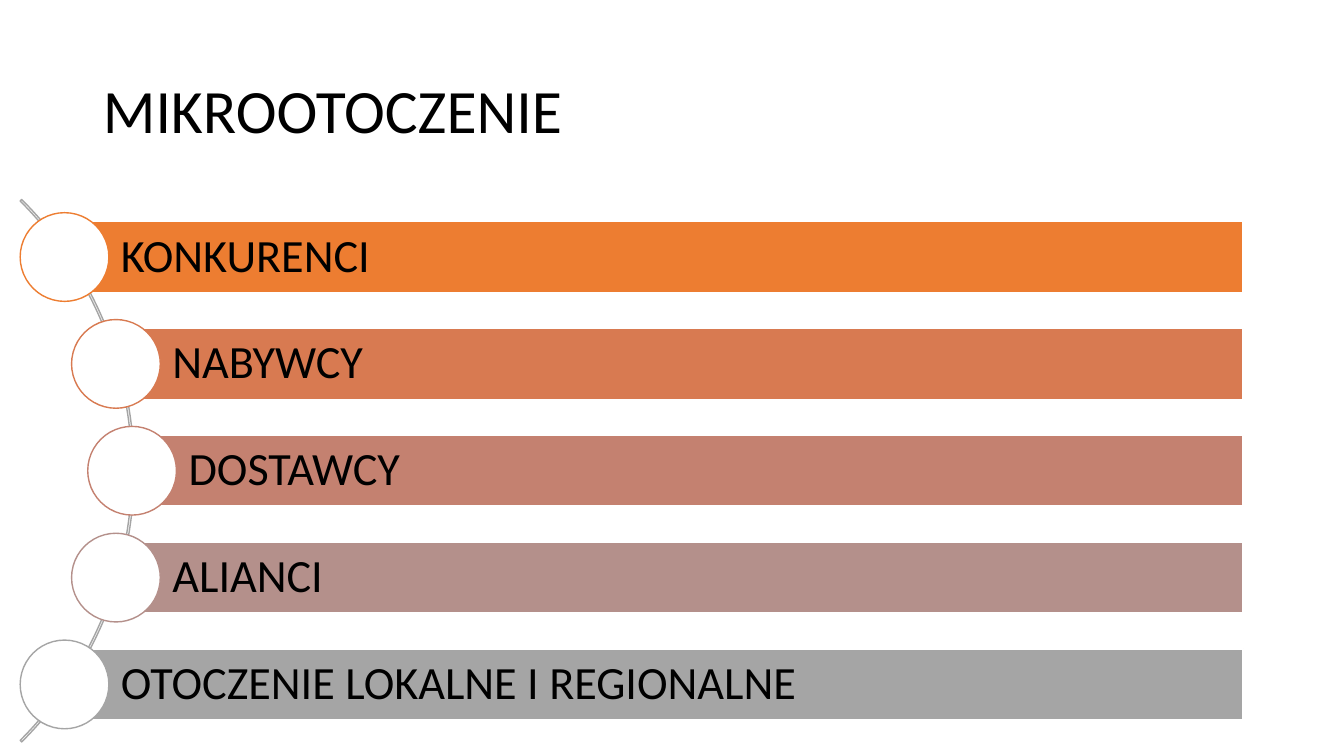
import pptx
import pptx.util
import pptx.dml.color
import pptx.enum.shapes
import pptx.enum.text

Inches = pptx.util.Inches
Pt = pptx.util.Pt
RGB = pptx.dml.color.RGBColor
Kind = pptx.enum.shapes.MSO_SHAPE
Anchor = pptx.enum.text.MSO_ANCHOR
Align = pptx.enum.text.PP_ALIGN

BLACK = RGB(0x00, 0x00, 0x00)
WHITE = RGB(0xFF, 0xFF, 0xFF)
GREY = RGB(0xA5, 0xA5, 0xA5)
ORANGE = RGB(0xED, 0x7D, 0x31)
COPPER = RGB(0xD8, 0x7A, 0x51)
ROSE = RGB(0xC4, 0x81, 0x70)
MAUVE = RGB(0xB4, 0x90, 0x8B)

WIDE, HIGH = 13.33, 7.5
# label, colour, shift of the row to the right along the arc
ROWS = [
    ("KONKURENCI", ORANGE, 0),
    ("NABYWCY", COPPER, 0.51),
    ("DOSTAWCY", ROSE, 0.67),
    ("ALIANCI", MAUVE, 0.51),
    ("OTOCZENIE LOKALNE I REGIONALNE", GREY, 0),
]


def write(shape, text, size, inset):
    frame = shape.text_frame
    look = {
        "word_wrap": True,
        "auto_size": pptx.enum.text.MSO_AUTO_SIZE.NONE,
        "vertical_anchor": Anchor.MIDDLE,
        "margin_left": Inches(inset),
        "margin_right": Inches(0.09),
    }
    for name, value in look.items():
        setattr(frame, name, value)
    frame.text = text
    para = frame.paragraphs[0]
    para.alignment = Align.LEFT
    para.line_spacing = 0.9
    font = para.runs[0].font
    for name, value in {"name": "Calibri", "size": Pt(size)}.items():
        setattr(font, name, value)
    font.color.rgb = BLACK


def draw(slide, kind, box, fill, line):
    shape = slide.shapes.add_shape(kind, *map(Inches, box))
    shape.shadow.inherit = False
    if fill is None:
        shape.fill.background()
    else:
        shape.fill.solid()
        shape.fill.fore_color.rgb = fill
    shape.line.color.rgb = line
    shape.line.width = Pt(1)
    return shape


def head(slide, box, text):
    title = slide.shapes.title
    for name, value in zip(("left", "top", "width", "height"), box):
        setattr(title, name, Inches(value))
    write(title, text, 44, 0.1)


def arc(slide, right, mid, size):
    """Thin arc from -45 to 45 degrees, bulging to the right edge."""
    box = (right - size, mid - size / 2, size, size)
    band = draw(slide, Kind.BLOCK_ARC, box, None, GREY)
    for i, value in enumerate((189, 27, 0.00284)):
        band.adjustments[i] = value


def rows(slide, box):
    """Bars with a dot on their left end, spread evenly down the box."""
    left, top, width, height = box
    dot = 0.88
    bar = 0.8 * dot
    step = (height - dot) / (len(ROWS) - 1)
    for i, (label, color, shift) in enumerate(ROWS):
        x = left + shift
        y = top + i * step
        start = x + dot / 2
        strip = draw(slide, Kind.RECTANGLE,
                     (start, y + (dot - bar) / 2, left + width - start, bar),
                     color, WHITE)
        write(strip, label, 33, 0.56)
        draw(slide, Kind.OVAL, (x, y, dot, dot), WHITE, color)


def main():
    deck = pptx.Presentation()
    deck.slide_width = Inches(WIDE)
    deck.slide_height = Inches(HIGH)
    slide = deck.slides.add_slide(deck.slide_layouts[5])
    head(slide, (0.92, 0.4, 11.5, 1.45), "MIKROOTOCZENIE")
    arc(slide, 1.33, 4.67, 7.61)
    rows(slide, (0.2, 2.11, 12.13, 5.12))
    deck.save("out.pptx")


if __name__ == "__main__":
    main()
